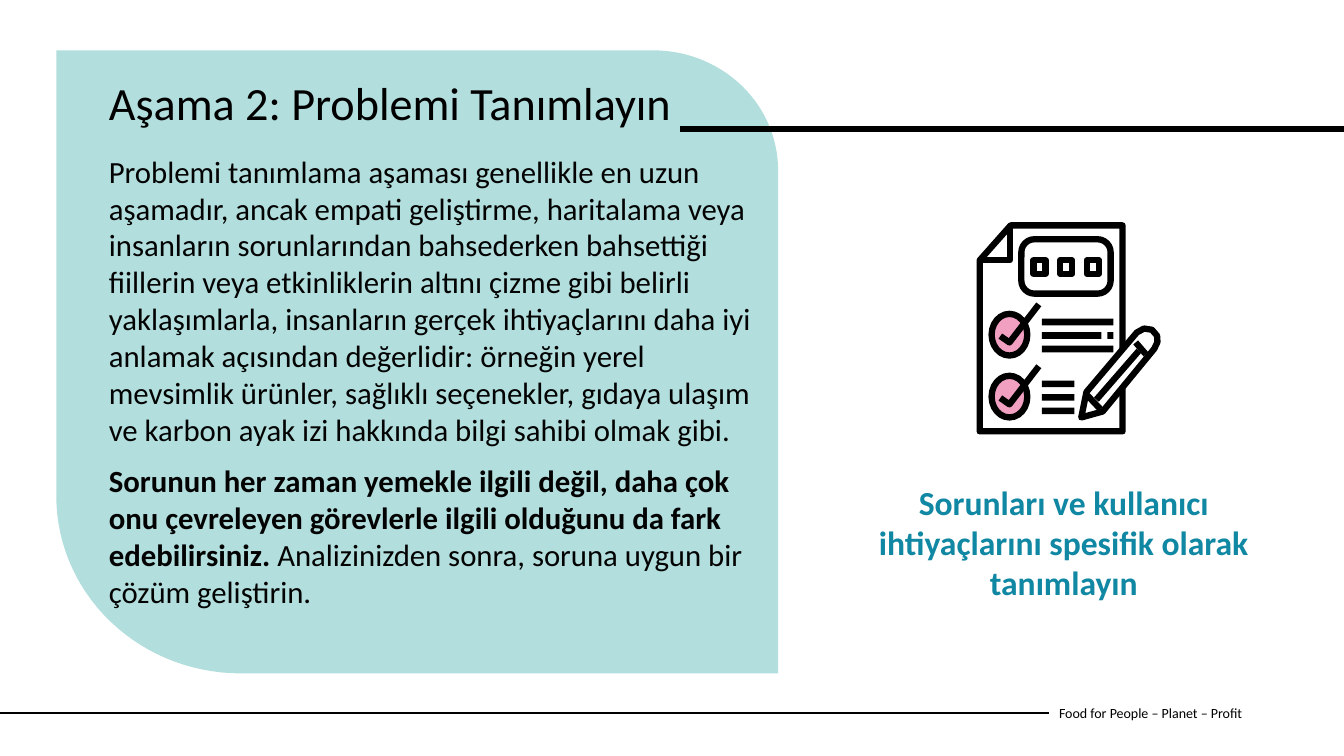
from math import cos, radians, sin

from lxml import etree
from pptx import Presentation
from pptx.dml.color import RGBColor
from pptx.enum.shapes import MSO_CONNECTOR as CONN, MSO_SHAPE as SHAPE
from pptx.enum.text import MSO_ANCHOR as ANCHOR, MSO_AUTO_SIZE as AUTO, PP_ALIGN as ALIGN
from pptx.oxml.ns import qn
from pptx.util import Cm, Pt

BLACK = RGBColor(0x00, 0x00, 0x00)
INK = RGBColor(0x03, 0x03, 0x03)
WHITE = RGBColor(0xFF, 0xFF, 0xFF)
MINT = RGBColor(0xB2, 0xDE, 0xDD)
PINK = RGBColor(0xF1, 0xA0, 0xC2)
TEAL = RGBColor(0x11, 0x88, 0xA3)

FONT = "Calibri"
STROKE = 4.5
ICON_X, ICON_Y = 24.61, 5.59

TITLE = "Aşama 2: Problemi Tanımlayın"
BODY = [
    [("Problemi tanımlama aşaması genellikle en uzun aşamadır, ancak empati geliştirme, "
      "haritalama veya insanların sorunlarından bahsederken bahsettiği fiillerin veya "
      "etkinliklerin altını çizme gibi belirli yaklaşımlarla, insanların gerçek "
      "ihtiyaçlarını daha iyi anlamak açısından değerlidir: örneğin yerel mevsimlik "
      "ürünler, sağlıklı seçenekler, gıdaya ulaşım ve karbon ayak izi hakkında bilgi "
      "sahibi olmak gibi.", False)],
    [("Sorunun her zaman yemekle ilgili değil, daha çok onu çevreleyen görevlerle ilgili "
      "olduğunu da fark edebilirsiniz. ", True),
     ("Analizinizden sonra, soruna uygun bir çözüm geliştirin.", False)],
]
CAPTION = "Sorunları ve kullanıcı ihtiyaçlarını spesifik olarak tanımlayın"
FOOTER = "Food for People – Planet – Profit"


def paint(sp, fill=None, line=None):
    sp.shadow.inherit = False
    if fill is None:
        sp.fill.background()
    else:
        sp.fill.solid()
        sp.fill.fore_color.rgb = fill
    if line is None:
        sp.line.fill.background()
    else:
        sp.line.color.rgb = BLACK
        sp.line.width = Pt(line)


def add_preset(s, kind, x, y, w, h, fill=None, line=None):
    sp = s.shapes.add_shape(kind, Cm(x), Cm(y), Cm(w), Cm(h))
    paint(sp, fill, line)
    return sp


def add_outline(s, points, fill=None, line=None, close=True, dx=0, dy=0):
    pts = [(Cm(x + dx), Cm(y + dy)) for x, y in points]
    builder = s.shapes.build_freeform(*pts[0], scale=1.0)
    builder.add_line_segments(pts[1:], close=close)
    paint(builder.convert_to_shape(), fill, line)


def add_line(s, x1, y1, x2, y2, width):
    cx = s.shapes.add_connector(CONN.STRAIGHT, Cm(x1), Cm(y1), Cm(x2), Cm(y2))
    cx.line.color.rgb = BLACK
    cx.line.width = Pt(width)
    etree.SubElement(cx.element.spPr, qn("a:effectLst"))


def place(s, sp, x, y, w, h):
    sp.left, sp.top, sp.width, sp.height = Cm(x), Cm(y), Cm(w), Cm(h)
    s.shapes.element.append(sp.element)


def format_runs(p, size, color, bold=False):
    for r in p.runs:
        r.font.name = FONT
        r.font.size = Pt(size)
        r.font.bold = bold
        r.font.color.rgb = color


def add_label(s, text, x, y, w, h, size, color, bold=False, align=ALIGN.LEFT, anchor=ANCHOR.TOP):
    tf = s.shapes.add_textbox(Cm(x), Cm(y), Cm(w), Cm(h)).text_frame
    tf.word_wrap = True
    tf.vertical_anchor = anchor
    tf.text = text
    p = tf.paragraphs[0]
    p.alignment = align
    format_runs(p, size, color, bold)


def arc(cx, cy, rx, ry, start):
    angles = [radians(start + step) for step in range(0, 91, 3)]
    return [(cx + rx * cos(a), cy + ry * sin(a)) for a in angles]


def add_panel(s):
    left, top, right, bottom = 1.42, 1.27, 19.61, 16.97
    points = [(left, top)]
    points += arc(right - 3.15, top + 3.02, 3.15, 3.02, 270)
    points += [(right, bottom)]
    points += arc(left + 4.65, bottom - 4.47, 4.65, 4.47, 90)
    add_outline(s, points, fill=MINT)


def fill_title(s):
    sp = s.shapes.title
    place(s, sp, 2.49, 1.9, 15.44, 2.77)
    tf = sp.text_frame
    tf.text = TITLE
    tf.auto_size = AUTO.NONE
    tf.vertical_anchor = ANCHOR.TOP
    p = tf.paragraphs[0]
    p.alignment = ALIGN.LEFT
    p.line_spacing = 0.9
    p.space_before = Pt(10)
    format_runs(p, 33, BLACK)


def fill_body(s):
    sp = s.placeholders[1]
    place(s, sp, 2.49, 3.71, 16.81, 11.89)
    tf = sp.text_frame
    tf.auto_size = AUTO.NONE
    for i, parts in enumerate(BODY):
        p = tf.add_paragraph() if i else tf.paragraphs[0]
        p.space_before = Pt(10)
        pPr = p._p.get_or_add_pPr()
        pPr.set("marL", "0")
        pPr.set("indent", "0")
        etree.SubElement(pPr, qn("a:buNone"))
        for text, bold in parts:
            p.add_run().text = text
        format_runs(p, 22, INK)
        for r, (text, bold) in zip(p.runs, parts):
            r.font.bold = bold


def add_page(s):
    at = {"dx": ICON_X, "dy": ICON_Y, "line": STROKE}
    add_outline(s, [(0.86, 0.09), (3.68, 0.09), (3.68, 5.28), (0.08, 5.28), (0.08, 0.97)],
                fill=WHITE, **at)
    add_outline(s, [(0.84, 0.09), (0.84, 0.97), (0.08, 0.97)], close=False, **at)
    box = add_preset(s, SHAPE.ROUNDED_RECTANGLE, ICON_X + 1.13, ICON_Y + 0.44, 2.25, 1.37,
                     line=STROKE)
    box.adjustments[0] = 0.24
    for i in range(3):
        add_preset(s, SHAPE.RECTANGLE, ICON_X + 1.44 + 0.67 * i, ICON_Y + 0.97, 0.3, 0.34,
                   line=STROKE)


def add_check_item(s, y, widths):
    add_preset(s, SHAPE.OVAL, ICON_X + 0.38, y, 0.9, 1.05, PINK, STROKE)
    add_outline(s, [(0.6, 0.56), (0.83, 0.72), (1.57, -0.24)], line=STROKE, close=False,
                dx=ICON_X, dy=y)
    for i, w in enumerate(widths):
        add_preset(s, SHAPE.RECTANGLE, ICON_X + 1.65, y + 0.12 + 0.34 * i, w, 0.17, BLACK)


def add_pencil(s):
    add_outline(s, [(2.64, 4.93), (2.77, 4.29), (4.04, 2.79), (4.22, 2.69), (4.42, 2.72),
                    (4.55, 2.87), (4.56, 3.03), (4.48, 3.2), (3.18, 4.78)],
                fill=WHITE, line=STROKE, dx=ICON_X, dy=ICON_Y)
    strokes = [(4.01, 3.04, 4.27, 3.34), (2.79, 4.37, 3.12, 4.72), (3.02, 4.48, 4.09, 3.25)]
    for x1, y1, x2, y2 in strokes:
        add_line(s, ICON_X + x1, ICON_Y + y1, ICON_X + x2, ICON_Y + y2, STROKE)


def main():
    """Build the problem definition slide and save it."""
    prs = Presentation()
    prs.slide_width, prs.slide_height = Cm(33.87), Cm(19.05)
    s = prs.slides.add_slide(prs.slide_layouts[1])
    add_label(s, FOOTER, 26.44, 17.45, 6.93, 1.02, 10, BLACK, anchor=ANCHOR.MIDDLE)
    add_line(s, 0, 17.96, 26.44, 17.96, 1.5)
    add_panel(s)
    add_line(s, 17.14, 3.25, 33.87, 3.25, 4.85)
    fill_title(s)
    fill_body(s)
    add_page(s)
    add_check_item(s, ICON_Y + 2.32, [1.8, 1.5, 1.8])
    add_check_item(s, ICON_Y + 3.88, [0.82] * 3)
    add_preset(s, SHAPE.RECTANGLE, ICON_X + 3.3, ICON_Y + 2.78, 0.15, 0.17, BLACK)
    add_pencil(s)
    add_label(s, CAPTION, 21.44, 12.01, 10.74, 3.33, 24, TEAL, True, ALIGN.CENTER)
    prs.save("out.pptx")


if __name__ == "__main__":
    main()
